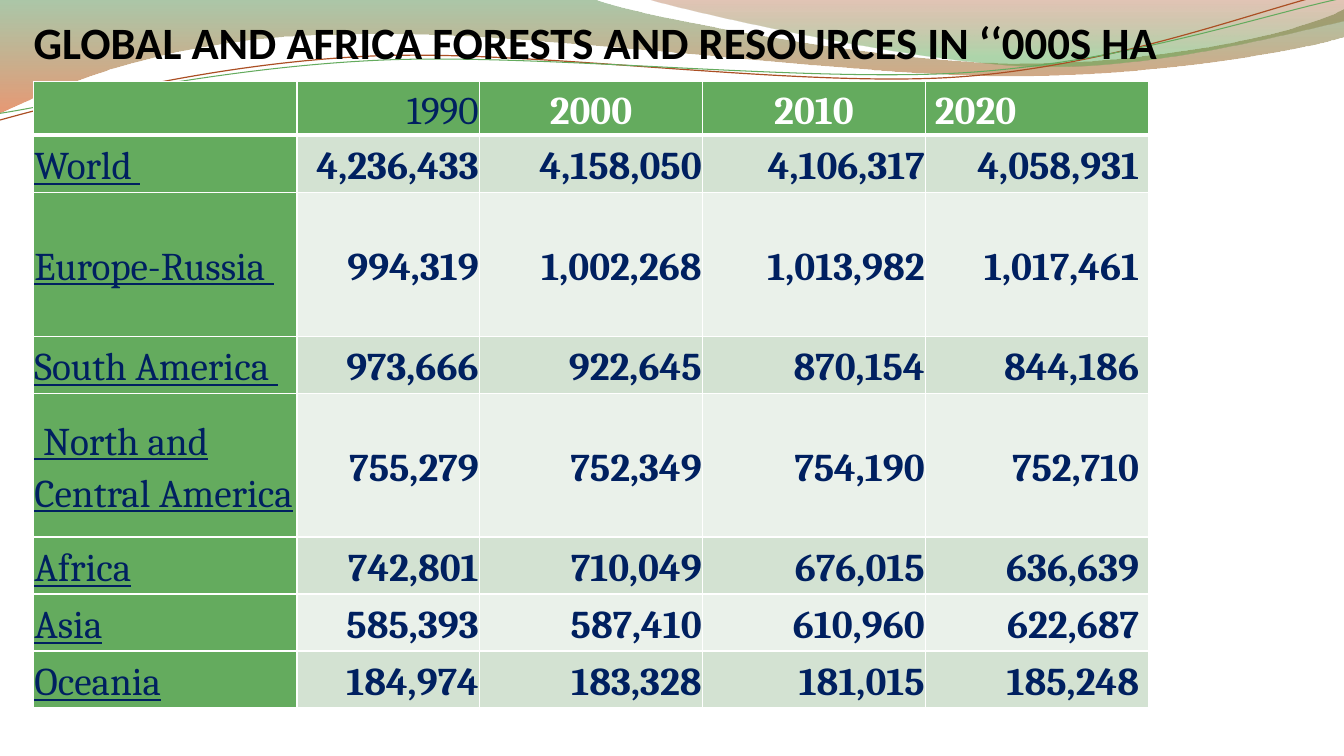
from lxml.etree import SubElement
from pptx import Presentation
from pptx.dml.color import RGBColor as RGB
from pptx.enum.text import MSO_ANCHOR as ANCHOR, PP_ALIGN as ALIGN
from pptx.oxml.ns import qn
from pptx.util import Pt

COLORS = {"navy": "002060", "white": "FFFFFF", "black": "000000",
          "green": "64AB5E", "rust": "AB4F24", "odd": "D3E2D2", "even": "EAF1EA",
          "leaf": "458440", "orange": "D54300", "brown": "A13C0D", "grass": "4DA445"}


def write(frame, text, size=28, font="Cambria", color="navy", bold=False,
          under=False, align=ALIGN.LEFT, space=1.15):
    para = frame.paragraphs[0]
    para.alignment, para.line_spacing = align, space
    run = para.add_run()
    run.text = text
    face = run.font
    face.size, face.name, face.bold, face.underline = Pt(size), font, bold, under
    face.color.rgb = RGB.from_string(COLORS[color])


def draw(shapes, steps, close):
    """Trace steps: pairs are straight lines, sextets are Bezier curves."""
    pen = shapes.build_freeform(*map(Pt, steps[0]))
    for step in steps[1:]:
        dots = [(Pt(x), Pt(y)) for x, y in zip(step[::2], step[1::2])]
        pen.add_line_segments(dots, close=False)
    shape = pen.convert_to_shape()
    shape.shadow.inherit = False
    path = next(shape.element.iter(qn("a:path")))
    lines = iter(path.findall(qn("a:lnTo")))
    for step in steps[1:]:
        group = [next(lines) for _ in step[::2]]
        if len(group) == 3:
            curve = SubElement(path, qn("a:cubicBezTo"))
            for line in group:
                curve.append(line[0])
                path.remove(line)
        else:
            path.append(group[0])
    if close:
        SubElement(path, qn("a:close"))
    return shape


deck = Presentation()
deck.slide_width, deck.slide_height = Pt(960), Pt(540)
slide = deck.slides.add_slide(deck.slide_layouts[6])
shapes = slide.shapes

# Shaded bands: outline, then (color, position, opacity in percent) per stop
bands = [
    ([(0, -1), (423, -1), (456, 12, 637, 45, 728, 45), (819, 45, 920, 27, 960, 6.5),
      (961, 26), (944, 32, 835, 55, 716, 54), (597, 54, 366, 20, 247, 24.5),
      (124, 25, 44, 60, -1, 81), (0, -1)],
     [("leaf", 0, 45), ("orange", 1, 55)]),
    ([(460, -1), (489, 8, 654, 45, 738, 47), (822, 50, 923, 23, 960, 15),
      (960, 0), (460, -1)],
     [("brown", 0, 30), ("grass", 0.8, 45)]),
]
for steps, stops in bands:
    band = draw(shapes, steps, True)
    band.line.fill.background()
    band.fill.gradient()
    band.fill.gradient_angle = 270
    for stop, (color, place, alpha) in zip(band.fill.gradient_stops, stops):
        stop.color.rgb = RGB.from_string(COLORS[color])
        stop.position = place
    for tone, (color, place, alpha) in zip(band.element.spPr.iter(qn("a:srgbClr")), stops):
        SubElement(tone, qn("a:alpha"), val=str(alpha * 1000))

# Thin waves
waves = [
    ([(-1, 86), (46, 73, 152, 45, 266, 40), (379, 35, 569, 63, 684, 55),
      (799, 47, 901, 6, 958, -7)], "rust", 0.85),
    ([(0, 81), (45, 74, 157, 48, 272, 43), (387, 38, 573, 59, 688, 52),
      (803, 45, 904, 10, 960, -1.5)], "green", 0.75),
]
for steps, color, width in waves:
    wave = draw(shapes, steps, False)
    wave.fill.background()
    wave.line.color.rgb = RGB.from_string(COLORS[color])
    wave.line.width = Pt(width)

# Title
frame = shapes.add_textbox(Pt(24), Pt(0), Pt(816), Pt(49)).text_frame
frame.word_wrap = True
frame.vertical_anchor = ANCHOR.BOTTOM
frame.margin_left = frame.margin_right = frame.margin_bottom = 0
write(frame, "GLOBAL AND AFRICA FORESTS AND RESOURCES IN ‘‘000S HA",
      size=32, font="Calibri", color="black", bold=True, space=1)

# Forest table
rows = [
    ("", "1990", "2000", "2010", " 2020"),
    ("World ", "4,236,433", "4,158,050", "4,106,317", "4,058,931 "),
    ("Europe-Russia ", "994,319", "1,002,268", "1,013,982", "1,017,461 "),
    ("South America ", "973,666", "922,645", "870,154", "844,186 "),
    (" North and Central America", "755,279", "752,349", "754,190", "752,710 "),
    ("Africa", "742,801", "710,049", "676,015", "636,639 "),
    ("Asia", "585,393", "587,410", "610,960", "622,687 "),
    ("Oceania", "184,974", "183,328", "181,015", "185,248 "),
]
widths = [188.2, 130.3, 159.3, 159.3, 159.3]
heights = [38, 40.7, 102.8, 40.7, 102.8, 40.7, 40.7, 40.7]
heads = [ALIGN.LEFT, ALIGN.RIGHT, ALIGN.CENTER, ALIGN.CENTER, ALIGN.LEFT]
table = shapes.add_table(len(rows), len(widths), Pt(24), Pt(58),
                         Pt(sum(widths)), Pt(sum(heights))).table
for col, width in zip(table.columns, widths):
    col.width = Pt(width)
for r, (row, height) in enumerate(zip(rows, heights)):
    table.rows[r].height = Pt(height)
    for c, text in enumerate(row):
        cell = table.cell(r, c)
        cell.vertical_anchor = ANCHOR.MIDDLE
        cell.margin_left = cell.margin_right = Pt(0.6)
        cell.margin_top = cell.margin_bottom = 0
        props = cell._tc.get_or_add_tcPr()
        for side in "LRTB":
            thick = (r, side) in ((0, "B"), (1, "T"))
            edge = SubElement(props, qn(f"a:ln{side}"), w=str(Pt(3 if thick else 1)))
            paint = SubElement(edge, qn("a:solidFill"))
            SubElement(paint, qn("a:srgbClr"), val=COLORS["white"])
        fill = "green" if r == 0 or c == 0 else "odd" if r % 2 else "even"
        cell.fill.solid()
        cell.fill.fore_color.rgb = RGB.from_string(COLORS[fill])
        if not text:
            continue
        if r == 0:
            write(cell.text_frame, text, align=heads[c], bold=c > 1,
                  color="white" if c > 1 else "navy")
        elif c == 0:
            write(cell.text_frame, text, under=True)
        else:
            write(cell.text_frame, text, bold=True, align=ALIGN.RIGHT)

deck.save("out.pptx")
